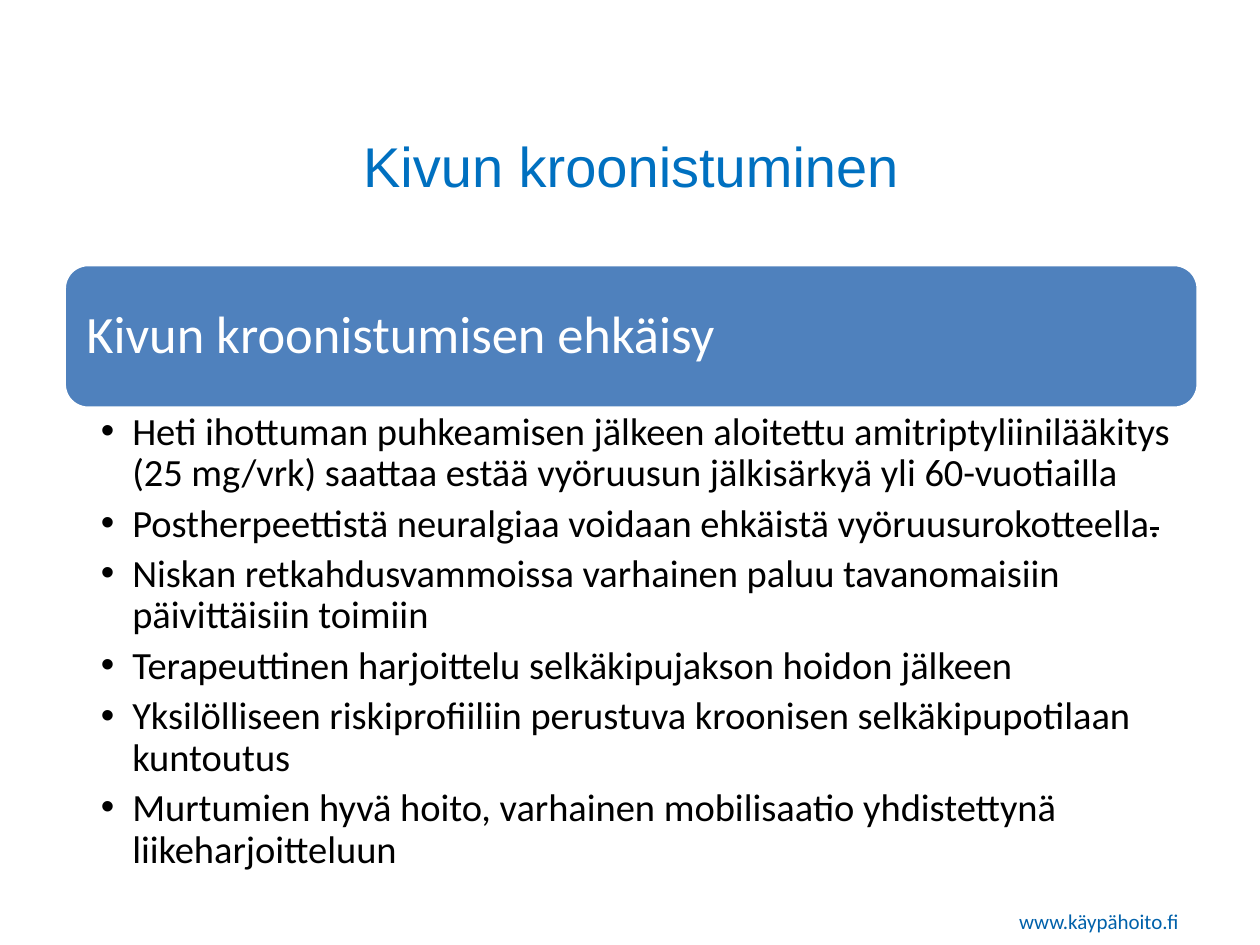
from dataclasses import dataclass

from lxml.etree import SubElement
from pptx import Presentation
from pptx.dml.color import RGBColor
from pptx.enum.shapes import MSO_SHAPE
from pptx.enum.text import MSO_ANCHOR, PP_ALIGN
from pptx.oxml.ns import qn
from pptx.util import Inches, Pt


@dataclass(frozen=True)
class Theme:
    title_color: RGBColor = RGBColor(0x00, 0x70, 0xC0)
    footer_color: RGBColor = RGBColor(0x00, 0x61, 0xAA)
    banner_color: RGBColor = RGBColor(0x4F, 0x81, 0xBD)
    white: RGBColor = RGBColor(0xFF, 0xFF, 0xFF)
    black: RGBColor = RGBColor(0x00, 0x00, 0x00)
    title_size: int = 32
    banner_size: int = 30
    body_size: int = 22
    footer_size: int = 12


theme = Theme()


def set_frame(frame, anchor, left=0.1, top=0.05, right=0.1, bottom=0.05):
    """Wrap the text, anchor it and set the insets in inches."""
    frame.word_wrap = True
    frame.vertical_anchor = anchor
    frame.margin_left, frame.margin_right = Inches(left), Inches(right)
    frame.margin_top, frame.margin_bottom = Inches(top), Inches(bottom)


def style(para, name, size, color, align=PP_ALIGN.LEFT):
    para.alignment = align
    para.font.name = name
    para.font.size = Pt(size)
    para.font.color.rgb = color


deck = Presentation()
deck.slide_width, deck.slide_height = Inches(10), Inches(7.5)
slide = deck.slides.add_slide(deck.slide_layouts[6])
left, width = Inches(0.51), Inches(9)

# Footer
footer = slide.shapes.add_textbox(Inches(7.99), Inches(7.16), Inches(1.89), Inches(0.3))
set_frame(footer.text_frame, MSO_ANCHOR.TOP)
para = footer.text_frame.paragraphs[0]
para.text = "www.käypähoito.fi"
style(para, "Calibri", theme.footer_size, theme.footer_color)

# Title
title = slide.shapes.add_textbox(left, Inches(0.76), width, Inches(1.1))
set_frame(title.text_frame, MSO_ANCHOR.MIDDLE)
para = title.text_frame.paragraphs[0]
para.text = "Kivun kroonistuminen"
style(para, "Arial", theme.title_size, theme.title_color, PP_ALIGN.CENTER)

# Banner
banner = slide.shapes.add_shape(
    MSO_SHAPE.ROUNDED_RECTANGLE, left, Inches(2.1), width, Inches(1.14))
banner.shadow.inherit = False
banner.fill.solid()
banner.fill.fore_color.rgb = theme.banner_color
banner.line.color.rgb = theme.white
banner.line.width = Pt(2)
set_frame(banner.text_frame, MSO_ANCHOR.MIDDLE, 0.12, 0.12, 0.12, 0.12)
para = banner.text_frame.paragraphs[0]
para.text = "Kivun kroonistumisen ehkäisy"
para.line_spacing = 0.9
style(para, "Calibri", theme.banner_size, theme.white)

# Bullets: each is a list of (text, struck through)
bullets = [
    [("Heti ihottuman puhkeamisen jälkeen aloitettu amitriptyliinilääkitys "
      "(25 mg/vrk) saattaa estää vyöruusun jälkisärkyä yli 60-vuotiailla", False)],
    [("Postherpeettistä neuralgiaa voidaan ehkäistä vyöruusurokotteella", False),
     (".", True)],
    [("Niskan retkahdusvammoissa varhainen paluu tavanomaisiin "
      "päivittäisiin toimiin", False)],
    [("Terapeuttinen harjoittelu selkäkipujakson hoidon jälkeen", False)],
    [("Yksilölliseen riskiprofiiliin perustuva kroonisen selkäkipupotilaan "
      "kuntoutus", False)],
    [("Murtumien hyvä hoito, varhainen mobilisaatio yhdistettynä "
      "liikeharjoitteluun", False)],
]
body = slide.shapes.add_textbox(left, Inches(3.24), width, Inches(3.66))
frame = body.text_frame
set_frame(frame, MSO_ANCHOR.TOP, 0.29, 0.03, 0.17, 0.03)
for index, pieces in enumerate(bullets):
    para = frame.add_paragraph() if index else frame.paragraphs[0]
    para.level = 1
    para.line_spacing = 0.9
    para.space_after = Pt(5)
    properties = para._p.get_or_add_pPr()
    properties.set("marL", str(Inches(0.25)))
    properties.set("indent", str(-Inches(0.25)))
    SubElement(properties, qn("a:buFont"), typeface="Arial")
    SubElement(properties, qn("a:buChar"), char="•")
    style(para, "Calibri", theme.body_size, theme.black)
    for text, struck in pieces:
        span = para.add_run()
        span.text = text
        if struck:
            span._r.get_or_add_rPr().set("strike", "sngStrike")

deck.save("out.pptx")
